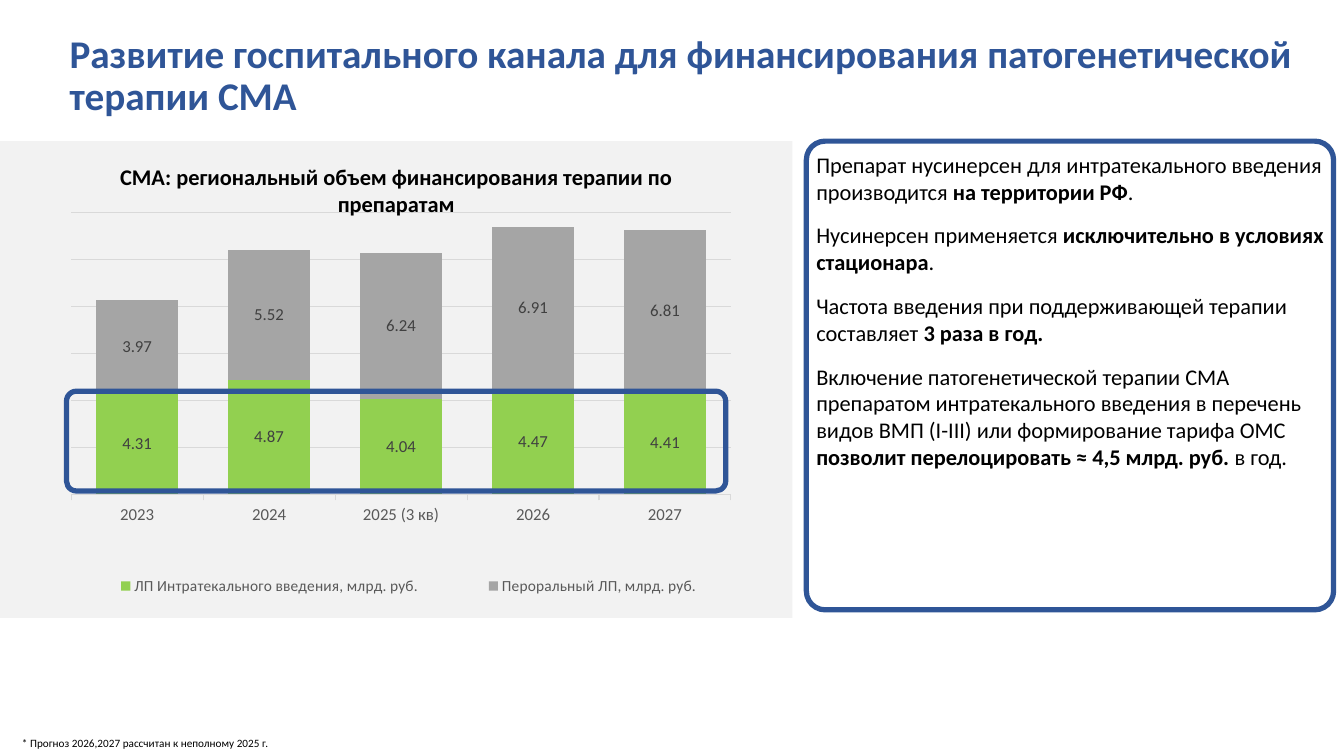
"""Build a slide on hospital-channel funding of SMA therapy with a stacked column chart."""
from lxml import etree
from pptx import Presentation
from pptx.chart.data import CategoryChartData
from pptx.dml.color import RGBColor
from pptx.enum.chart import XL_CHART_TYPE as ChartType, XL_LEGEND_POSITION as LegendPosition
from pptx.enum.chart import XL_TICK_LABEL_POSITION as LabelPosition, XL_TICK_MARK as TickMark
from pptx.enum.shapes import MSO_SHAPE as Shape
from pptx.enum.text import MSO_ANCHOR as Anchor, PP_ALIGN as Align
from pptx.oxml.ns import qn
from pptx.util import Pt

FONT = "Calibri"
BLUE = "2F5597"
BLACK = "000000"
GRID = "D9D9D9"
CATEGORIES = ["2023", "2024", "2025 (3 кв)", "2026", "2027"]
SERIES = [
    ("ЛП Интратекального введения, млрд. руб.", "92D050", [4.31, 4.87, 4.04, 4.47, 4.41]),
    ("Пероральный ЛП, млрд. руб.", "A5A5A5", [3.97, 5.52, 6.24, 6.91, 6.81]),
]
FACTS = [
    [("Препарат нусинерсен для интратекального введения производится ", False),
     ("на территории РФ", True), (".", False)],
    [("Нусинерсен применяется ", False),
     ("исключительно в условиях стационара", True), (".", False)],
    [("Частота введения при поддерживающей терапии составляет ", False),
     ("3 раза в год.", True)],
    [("Включение патогенетической терапии СМА препаратом интратекального введения "
      "в перечень видов ВМП (I-III) или формирование тарифа ОМС ", False),
     ("позволит перелоцировать ≈ 4,5 млрд. руб. ", True), ("в год.", False)],
]


def color(value):
    return RGBColor.from_string(value)


def set_font(font, size, value, bold=False):
    font.name = FONT
    font.size = Pt(size)
    font.bold = bold
    font.color.rgb = color(value)


def set_line(line, value, width):
    line.color.rgb = color(value)
    line.width = Pt(width)


def place(shape, left, top, width, height):
    shape.left, shape.top, shape.width, shape.height = map(Pt, (left, top, width, height))


def add_title(slide, text):
    title = slide.shapes.title
    place(title, 42.5, 26.6, 892.8, 56.2)
    title.text_frame.word_wrap = True
    title.text_frame.vertical_anchor = Anchor.MIDDLE
    paragraph = title.text_frame.paragraphs[0]
    paragraph.alignment = Align.LEFT
    paragraph.line_spacing = 0.9
    run = paragraph.add_run()
    run.text = text
    set_font(run.font, 28, BLUE, True)


def add_text(slide, box, paragraphs, size, align=Align.LEFT, space_before=0):
    frame = slide.shapes.add_textbox(*map(Pt, box)).text_frame
    frame.word_wrap = True
    for index, runs in enumerate(paragraphs):
        paragraph = frame.add_paragraph() if index else frame.paragraphs[0]
        paragraph.alignment = align
        paragraph.space_before = Pt(space_before)
        for text, bold in runs:
            run = paragraph.add_run()
            run.text = text
            set_font(run.font, size, BLACK, bold)


def add_panel(slide, box, fill):
    panel = slide.shapes.add_shape(Shape.RECTANGLE, *map(Pt, box))
    panel.shadow.inherit = False
    panel.fill.solid()
    panel.fill.fore_color.rgb = color(fill)
    panel.line.fill.background()


def add_frame(slide, box, rounding):
    frame = slide.shapes.add_shape(Shape.ROUNDED_RECTANGLE, *map(Pt, box))
    frame.shadow.inherit = False
    frame.adjustments[0] = rounding
    frame.fill.background()
    set_line(frame.line, BLUE, 3.75)


def set_layout(parent, box, inner=False):
    for old in parent.findall(qn("c:layout")):
        parent.remove(old)
    layout = etree.Element(qn("c:layout"))
    manual = etree.SubElement(layout, qn("c:manualLayout"))
    settings = [("layoutTarget", "inner")] if inner else []
    settings += [("xMode", "edge"), ("yMode", "edge"), *zip("xywh", box)]
    for name, value in settings:
        etree.SubElement(manual, qn(f"c:{name}")).set("val", str(value))
    position = parent.find(qn("c:legendPos"))
    parent.insert(0 if position is None else 1, layout)


def style_axes(chart):
    category_axis, value_axis = chart.category_axis, chart.value_axis
    category_axis.major_tick_mark = TickMark.OUTSIDE
    category_axis.tick_label_position = LabelPosition.LOW
    set_font(category_axis.tick_labels.font, 12, "595959")
    set_line(category_axis.format.line, GRID, 0.75)
    value_axis.minimum_scale, value_axis.maximum_scale = 0, 12
    value_axis.major_unit = 2
    value_axis.has_major_gridlines = True
    set_line(value_axis.major_gridlines.format.line, GRID, 0.75)
    value_axis.visible = False


def add_stacked_chart(slide, box):
    data = CategoryChartData(number_format="0.00")
    data.categories = CATEGORIES
    for name, _, values in SERIES:
        data.add_series(name, values)
    chart = slide.shapes.add_chart(ChartType.COLUMN_STACKED, *map(Pt, box), data).chart
    chart.has_title = False
    set_font(chart.font, 10, BLACK)
    style_axes(chart)
    plot = chart.plots[0]
    plot.gap_width, plot.overlap, plot.vary_by_categories = 60, 100, False
    for series, (_, fill, _) in zip(plot.series, SERIES):
        series.format.fill.solid()
        series.format.fill.fore_color.rgb = color(fill)
        labels = series.data_labels
        labels.show_value = True
        labels.number_format, labels.number_format_is_linked = "0.00", False
        set_font(labels.font, 12, "404040")
    chart.has_legend = True
    legend = chart.legend
    legend.position = LegendPosition.BOTTOM
    legend.include_in_layout = False
    set_font(legend.font, 11, "595959")
    plot_area = chart.element.find(f".//{qn('c:plotArea')}")
    set_layout(plot_area, (0.06, 0, 0.86, 0.71), inner=True)
    set_layout(chart.element.find(f".//{qn('c:legend')}"), (0.04, 0.9, 0.92, 0.08))


def main():
    presentation = Presentation()
    presentation.slide_width, presentation.slide_height = Pt(960), Pt(540)
    slide = presentation.slides.add_slide(presentation.slide_layouts[5])
    add_panel(slide, (0, 100.8, 566, 340.6), "F2F2F2")
    add_title(slide, "Развитие госпитального канала для финансирования патогенетической терапии СМА")
    add_text(slide, (576, 104.4, 376.6, 237.6), FACTS, 16, space_before=12)
    add_stacked_chart(slide, (18, 151.2, 548, 284.4))
    heading = "СМА: региональный объем финансирования терапии по препаратам"
    add_text(slide, (78.5, 113, 409, 46), [[(heading, True)]], 16, Align.CENTER)
    footnote = "* Прогноз 2026,2027 рассчитан к неполному 2025 г."
    add_text(slide, (8.6, 522.7, 918, 17), [[(footnote, False)]], 8)
    add_frame(slide, (47.5, 279.4, 470.9, 71.3), 0.1)
    add_frame(slide, (576, 100.8, 376.6, 334.8), 0.04)
    presentation.save("out.pptx")


if __name__ == "__main__":
    main()
